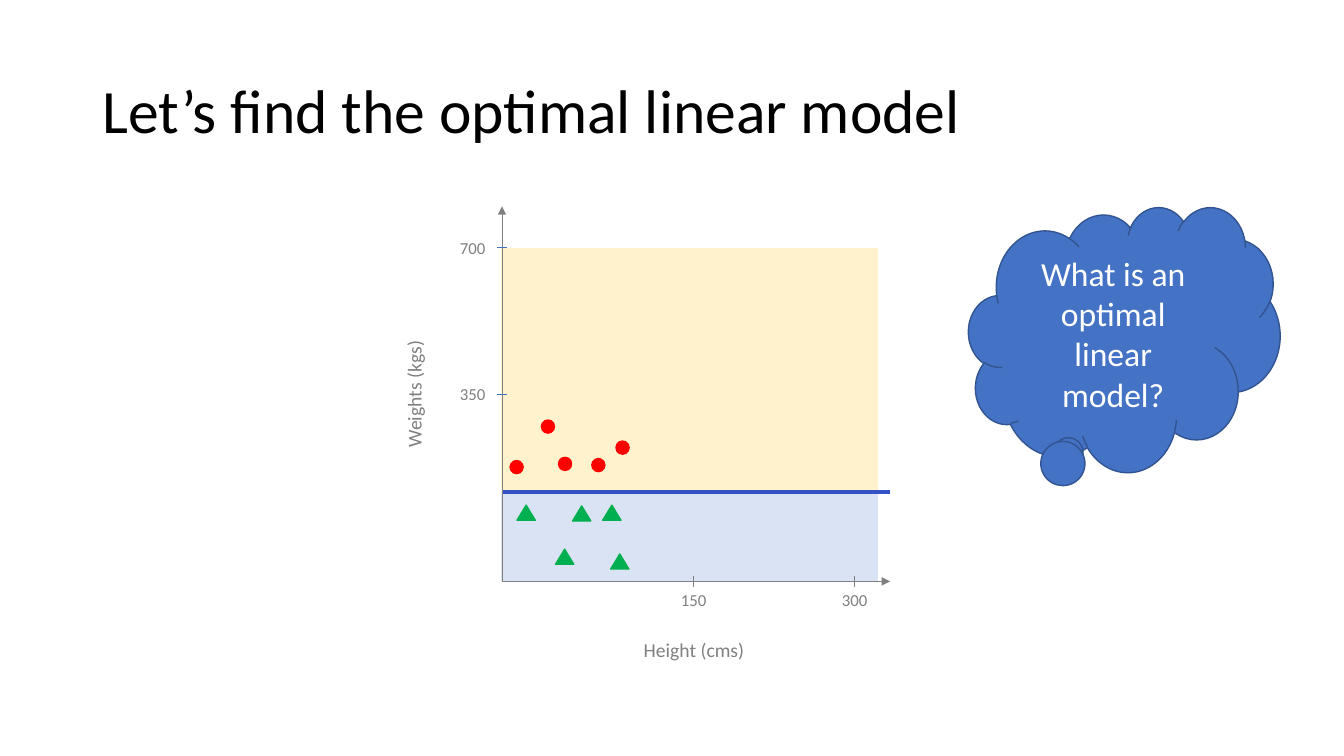
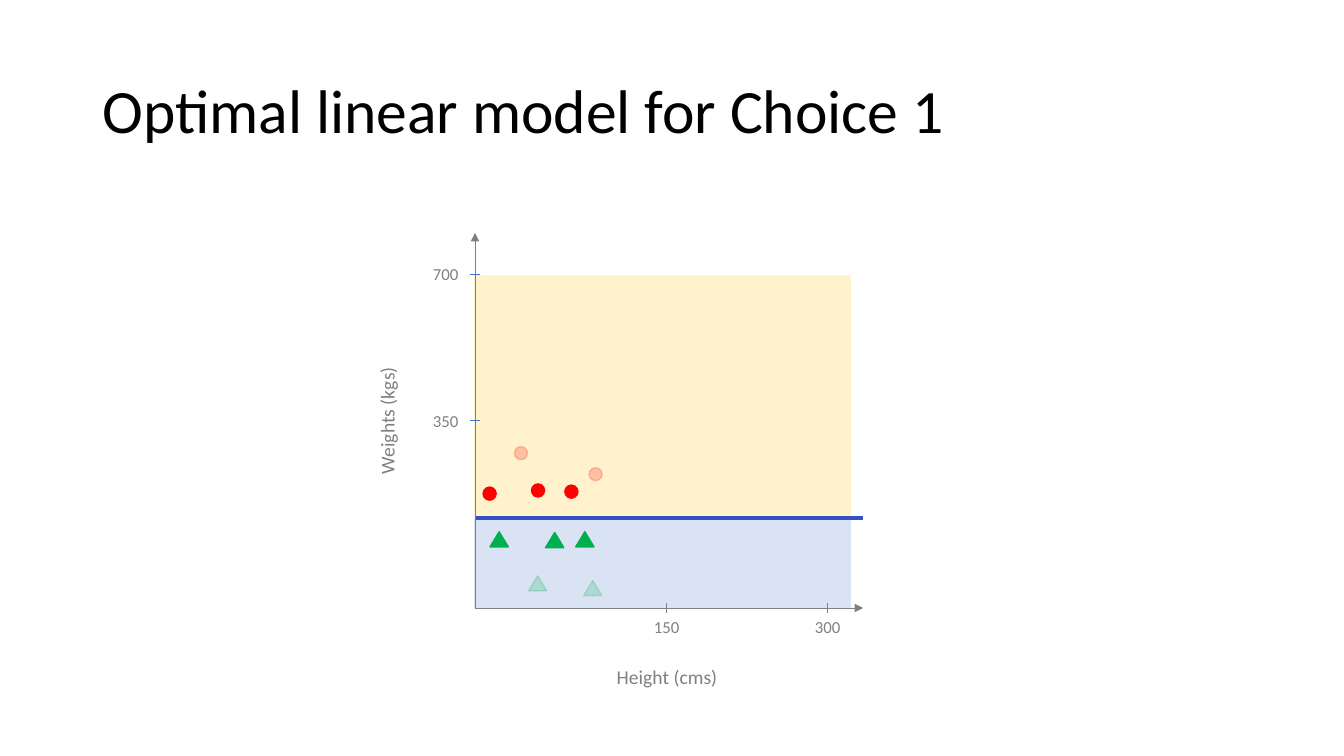
from lxml.etree import SubElement
from pptx import Presentation
from pptx.dml.color import RGBColor
from pptx.enum.shapes import MSO_CONNECTOR, MSO_SHAPE
from pptx.enum.text import MSO_ANCHOR, PP_ALIGN
from pptx.oxml.ns import qn
from pptx.util import Cm, Pt

RECT, CIRCLE = MSO_SHAPE.RECTANGLE, MSO_SHAPE.OVAL
TRIANGLE, CLOUD = MSO_SHAPE.ISOSCELES_TRIANGLE, MSO_SHAPE.CLOUD_CALLOUT
STRAIGHT = MSO_CONNECTOR.STRAIGHT
MIDDLE, CENTER = MSO_ANCHOR.MIDDLE, PP_ALIGN.CENTER

BLACK = RGBColor(0x00, 0x00, 0x00)
WHITE = RGBColor(0xFF, 0xFF, 0xFF)
GRAY = RGBColor(0x80, 0x80, 0x80)
BLUE = RGBColor(0x44, 0x72, 0xC4)
DARK_BLUE = RGBColor(0x32, 0x54, 0x91)
MODEL_BLUE = RGBColor(0x35, 0x52, 0xC4)
PALE_YELLOW = RGBColor(0xFF, 0xF2, 0xCC)
PALE_BLUE = RGBColor(0xDA, 0xE3, 0xF3)
RED = RGBColor(0xFF, 0x00, 0x00)
GREEN = RGBColor(0x00, 0xB0, 0x50)
FONT = "Calibri"

# Plot measures in cm, from the axis origin: x to the right, y upwards
PLOT_W, PLOT_H = 9.47, 8.38
AXIS_W, AXIS_H = 9.78, 9.45
MODEL_Y = 2.26
TICK = 0.13
X_TICKS = [("300", 8.89), ("150", 4.83)]
Y_TICKS = [("700", 8.41), ("350", 4.72)]
# Point centres, and whether the point is far from the model line
CIRCLES = [(1.16, 3.9, True), (0.37, 2.88, False), (1.59, 2.96, False),
           (2.43, 2.93, False), (3.04, 3.37, True)]
TRIANGLES = [(2.97, 0.5, True), (1.58, 0.62, True), (2.01, 1.71, False),
             (0.61, 1.73, False), (2.77, 1.73, False)]
MARKERS = [(CIRCLE, RED, 0.33, 0.33, CIRCLES),
           (TRIANGLE, GREEN, 0.46, 0.38, TRIANGLES)]


def add_figure(shapes, kind, x, y, w, h, fill, outline=None):
    sp = shapes.add_shape(kind, Cm(x), Cm(y), Cm(w), Cm(h))
    sp.shadow.inherit = False
    sp.fill.solid()
    sp.fill.fore_color.rgb = fill
    sp.line.color.rgb = outline or fill
    sp.line.width = Pt(1)
    return sp


def add_line(shapes, x1, y1, x2, y2, color, width, arrow=False):
    line = shapes.add_connector(STRAIGHT, Cm(x1), Cm(y1), Cm(x2), Cm(y2))
    line.line.color.rgb = color
    line.line.width = Pt(width)
    props = line._element.spPr
    if arrow:
        SubElement(props.find(qn("a:ln")), qn("a:tailEnd"), type="triangle")
    SubElement(props, qn("a:effectLst"))


def set_text(sp, text, size, color, align=None, wrap=True):
    tf = sp.text_frame
    tf.word_wrap = wrap
    tf.vertical_anchor = MIDDLE
    p = tf.paragraphs[0]
    p.text = text
    p.alignment = align
    p.font.name = FONT
    p.font.size = Pt(size)
    p.font.color.rgb = color
    return p


def add_label(shapes, text, cx, cy, w, h, size):
    sp = shapes.add_textbox(Cm(cx - w / 2), Cm(cy - h / 2), Cm(w), Cm(h))
    set_text(sp, text, size, GRAY, CENTER, wrap=False)
    return sp


def fade(sp):
    for color in sp._element.spPr.iter(qn("a:srgbClr")):
        SubElement(color, qn("a:alpha"), val="20000")


def add_title(slide, text):
    sp = slide.shapes.add_textbox(Cm(2.33), Cm(1.02), Cm(29.21), Cm(3.68))
    set_text(sp, text, 44, BLACK).line_spacing = 0.9


def add_regions(slide, x0, y0):
    """Two class regions, split by the model line."""
    shapes = slide.shapes.add_group_shape().shapes
    split = y0 - MODEL_Y
    add_figure(shapes, RECT, x0, y0 - PLOT_H, PLOT_W, 6.07, PALE_YELLOW)
    add_figure(shapes, RECT, x0, split, PLOT_W, 2.24, PALE_BLUE)
    add_line(shapes, x0, split, x0 + AXIS_W, split, MODEL_BLUE, 3)


def add_axes(slide, x0, y0):
    shapes = slide.shapes.add_group_shape().shapes
    add_line(shapes, x0, y0, x0, y0 - AXIS_H, GRAY, 0.5, arrow=True)
    add_line(shapes, x0, y0, x0 + AXIS_W, y0, GRAY, 0.5, arrow=True)
    add_label(shapes, "Height (cms)", x0 + 4.84, y0 + 1.73, 3.07, 0.86, 14)
    sp = add_label(shapes, "Weights (kgs)", x0 - 2.22, y0 - 4.72, 3.23, 0.86, 14)
    sp.rotation = 270
    for text, dx in X_TICKS:
        x = x0 + dx
        add_line(shapes, x, y0 - TICK, x, y0 + TICK, GRAY, 0.5)
        add_label(shapes, text, x, y0 + 0.47, 1.17, 0.76, 12)
    for text, dy in Y_TICKS:
        y = y0 - dy
        add_line(shapes, x0 + TICK, y, x0 - TICK, y, BLUE, 0.5)
        add_label(shapes, text, x0 - 0.74, y, 1.17, 0.76, 12)


def add_points(slide, x0, y0, fade_far):
    for kind, color, w, h, points in MARKERS:
        for dx, dy, far in points:
            sp = add_figure(slide.shapes, kind, x0 + dx - w / 2,
                            y0 - dy - h / 2, w, h, color)
            if far and fade_far:
                fade(sp)


def add_cloud(slide, x, y, w, h, text):
    sp = add_figure(slide.shapes, CLOUD, x, y, w, h, BLUE, DARK_BLUE)
    sp.adjustments[0], sp.adjustments[1] = -0.183, 0.435
    set_text(sp, text, 24, WHITE, CENTER)


def add_model_slide(prs, title, x0, y0, fade_far=False):
    """Title and scatter plot, with the axis origin at x0, y0."""
    slide = prs.slides.add_slide(prs.slide_layouts[6])
    add_regions(slide, x0, y0)
    add_axes(slide, x0, y0)
    add_points(slide, x0, y0, fade_far)
    add_title(slide, title)
    return slide


def main():
    prs = Presentation()
    prs.slide_width, prs.slide_height = Cm(33.87), Cm(19.05)
    slide = add_model_slide(prs, "Let’s find the optimal linear model", 12.65, 14.65)
    add_cloud(slide, 24.41, 5.21, 7.85, 6.68, "What is an optimal linear model?")
    add_model_slide(prs, "Optimal linear model for Choice 1", 11.97, 15.32,
                    fade_far=True)
    prs.save("out.pptx")


if __name__ == "__main__":
    main()
